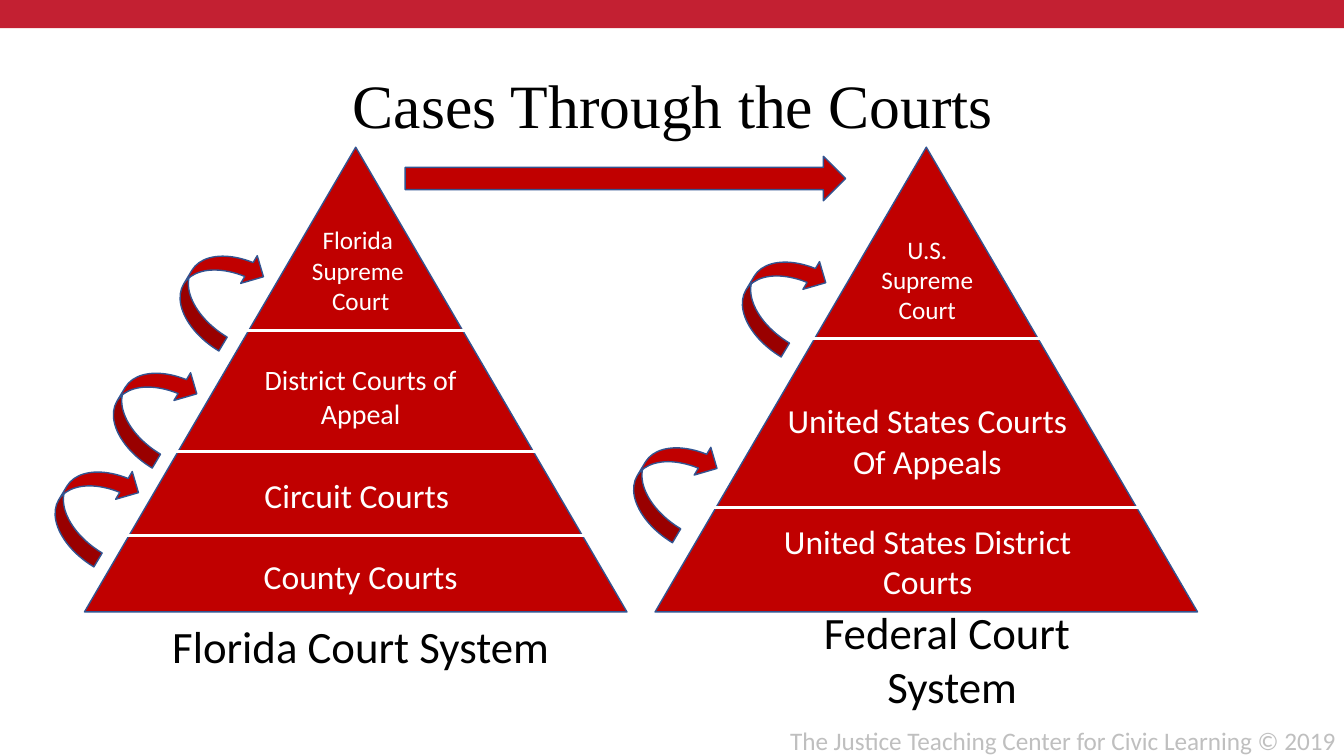
"""Build the slide on how cases move through the Florida and federal courts."""
from lxml.etree import SubElement
from pptx import Presentation
from pptx.dml.color import RGBColor
from pptx.enum.shapes import MSO_CONNECTOR as Connector, MSO_SHAPE as Shape
from pptx.enum.text import PP_ALIGN as Align
from pptx.oxml.ns import qn
from pptx.util import Cm, Pt

COLOURS = {
    "banner": "C32032", "court": "C00000", "outline": "325491",
    "divider": "FFFFFF", "label": "FFFFFF", "heading": "000000",
    "footer": "BFBFBF",
}
SLIDE_SIZE = (33.87, 19.05)
BANNER = (0, -0.03, 33.87, 0.74)
TITLE = ("Cases Through the Courts", (2.34, 1.57, 29.26, 2.13))
FOOTER = ("The Justice Teaching Center for Civic Learning © 2019",
          (19.66, 18.14, 14.53, 1.02))
PYRAMID_TOP, PYRAMID_SIZE = 3.71, (13.67, 11.71)
APPEAL_SIZE, APPEAL_ANGLE = (2.59, 1.63), 301
TRANSFER = (10.21, 3.94, 11.1, 1.12)

SYSTEMS = [
    {
        "left": 2.13,
        "dividers": [(2.79, 13.49, 12.26), (3.71, 11.38, 12.26), (3.53, 8.33, 12.26)],
        "courts": [
            (["Florida ", "Supreme ", "Court"], 18, (5.28, 5.54, 7.62, 2.57)),
            (["District Courts of", "Appeal"], 20, (5.28, 9.02, 7.62, 1.96)),
            (["Circuit Courts"], 24, (5.18, 11.84, 7.62, 2.31)),
            (["County Courts"], 24, (5.28, 13.89, 7.62, 4.37)),
        ],
        "caption": (["Florida Court System"], (3.53, 15.47, 11.13, 1.63)),
        "appeals": [(1.04, 11.94), (2.51, 9.45), (4.19, 6.5)],
    },
    {
        "left": 16.51,
        "dividers": [(17.3, 12.78, 13.39), (18.97, 8.53, 12.27)],
        "courts": [
            (["U.S.", "Supreme", "Court"], 18, (19.56, 5.77, 7.62, 2.57)),
            (["United States Courts", "Of Appeals"], 24, (19.56, 9.96, 7.62, 2.31)),
            (["United States District", "Courts"], 24, (18.67, 13, 9.42, 6.05)),
        ],
        "caption": (["Federal Court ", "System"], (18.19, 15.11, 11.61, 3)),
        "appeals": [(15.62, 11.33), (18.36, 6.65)],
    },
]


def colour(name):
    return RGBColor.from_string(COLOURS[name])


def add_solid(slide, kind, box, fill, outline=None, angle=0):
    solid = slide.shapes.add_shape(kind, *map(Cm, box))
    solid.shadow.inherit = False
    solid.fill.solid()
    solid.fill.fore_color.rgb = colour(fill)
    solid.rotation = angle
    if outline:
        solid.line.color.rgb = colour(outline)
        solid.line.width = Pt(1)
    else:
        solid.line.fill.background()


def add_text(slide, lines, box, size, ink, face="Calibri", align=Align.CENTER):
    frame = slide.shapes.add_textbox(*map(Cm, box)).text_frame
    frame.word_wrap = True
    for index, line in enumerate(lines):
        paragraph = frame.add_paragraph() if index else frame.paragraphs[0]
        paragraph.text = line
        paragraph.alignment = align
        paragraph.font.size = Pt(size)
        paragraph.font.name = face
        paragraph.font.color.rgb = colour(ink)


def add_divider(slide, left, top, width):
    divider = slide.shapes.add_connector(
        Connector.STRAIGHT, Cm(left), Cm(top), Cm(left + width), Cm(top))
    divider.line.color.rgb = colour("divider")
    divider.line.width = Pt(2.25)
    SubElement(divider._element.spPr, qn("a:effectLst"))


def add_system(slide, system):
    for divider in system["dividers"]:
        add_divider(slide, *divider)
    for lines, size, box in system["courts"]:
        add_text(slide, lines, box, size, "label")
    caption, box = system["caption"]
    add_text(slide, caption, box, 32, "heading")
    for corner in system["appeals"]:
        add_solid(slide, Shape.CURVED_DOWN_ARROW, corner + APPEAL_SIZE,
                  "court", "outline", APPEAL_ANGLE)


def main():
    deck = Presentation()
    deck.slide_width, deck.slide_height = map(Cm, SLIDE_SIZE)
    slide = deck.slides.add_slide(deck.slide_layouts[6])
    add_solid(slide, Shape.RECTANGLE, BANNER, "banner")
    title, box = TITLE
    add_text(slide, [title], box, 44, "heading", "Times New Roman")
    footer, box = FOOTER
    add_text(slide, [footer], box, 18, "footer", align=Align.LEFT)
    for system in SYSTEMS:
        add_solid(slide, Shape.ISOSCELES_TRIANGLE,
                  (system["left"], PYRAMID_TOP) + PYRAMID_SIZE, "court", "outline")
    for system in SYSTEMS:
        add_system(slide, system)
    add_solid(slide, Shape.RIGHT_ARROW, TRANSFER, "court", "outline")
    deck.save("out.pptx")


if __name__ == "__main__":
    main()
